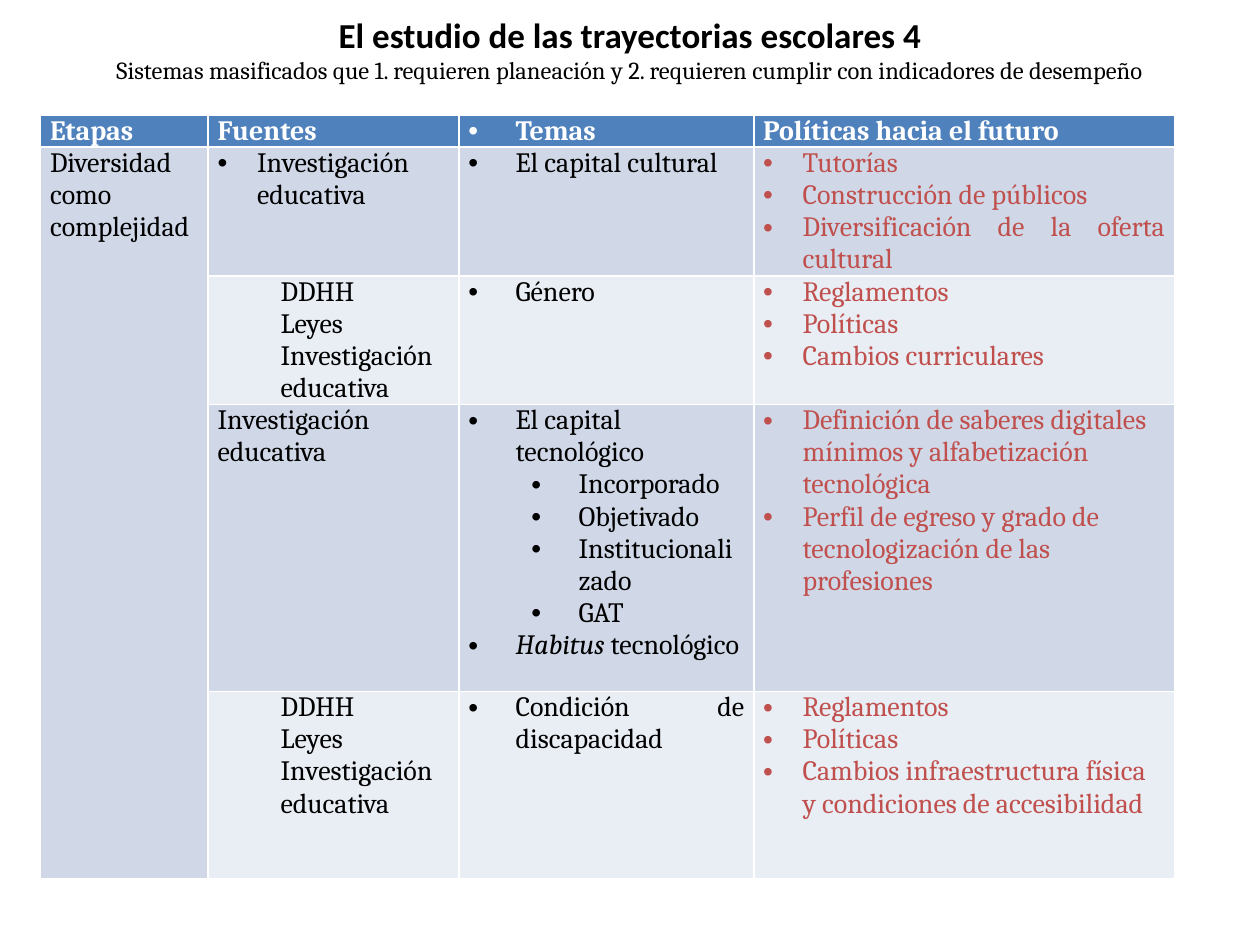
from pptx import Presentation
from pptx.dml.color import RGBColor as RGB
from pptx.enum.text import MSO_ANCHOR as Anchor, PP_ALIGN as Align
from pptx.util import Pt
from lxml.etree import SubElement as Sub
from pptx.oxml.ns import qn

BLACK = RGB(0, 0, 0)
WHITE = RGB(255, 255, 255)
RED = RGB(0xC0, 0x50, 0x4D)
BLUE = RGB(0x4F, 0x81, 0xBD)
BANDS = [RGB(0xD0, 0xD8, 0xE8), RGB(0xE9, 0xED, 0xF4)]

TITLE = [
    ("El estudio de las trayectorias escolares 4", 20, "Calibri", True),
    ("Sistemas masificados que 1. requieren planeación y "
     "2. requieren cumplir con indicadores de desempeño", 14, "Cambria", False),
]

# style: left margin, bullet hang, alignment
STYLES = {
    "plain": (0, 0, Align.LEFT),
    "wide": (0, 0, Align.JUSTIFY),
    "inset": (36, 0, Align.LEFT),
    "item": (22.5, 22.5, Align.LEFT),
    "item wide": (22.5, 22.5, Align.JUSTIFY),
    "theme": (27, 27, Align.LEFT),
    "theme wide": (27, 27, Align.JUSTIFY),
    "sub": (63, 27, Align.LEFT),
}

HEAD = [
    [("plain", "Etapas")],
    [("plain", "Fuentes")],
    [("theme", "Temas")],
    [("wide", "Políticas hacia el futuro")],
]
STAGE = [("plain", "Diversidad como complejidad")]
RIGHTS = [("inset", t) for t in ("DDHH", "Leyes", "Investigación educativa")]
ROWS = [
    [
        STAGE,
        [("item", "Investigación educativa")],
        [("theme", "El capital cultural")],
        [("item wide", "Tutorías"),
         ("item wide", "Construcción de públicos"),
         ("item wide", "Diversificación de la oferta cultural")],
    ],
    [
        [],
        RIGHTS,
        [("theme", "Género")],
        [("item wide", "Reglamentos"),
         ("item wide", "Políticas"),
         ("item wide", "Cambios curriculares")],
    ],
    [
        [],
        [("plain", "Investigación educativa")],
        [("theme", "El capital tecnológico"),
         ("sub", "Incorporado"),
         ("sub", "Objetivado"),
         ("sub", "Institucionalizado"),
         ("sub", "GAT"),
         ("theme", "*Habitus* tecnológico")],
        [("item", "Definición de saberes digitales mínimos y alfabetización tecnológica"),
         ("item", "Perfil de egreso y grado de tecnologización de las profesiones")],
    ],
    [
        [],
        RIGHTS,
        [("theme wide", "Condición de discapacidad")],
        [("item", "Reglamentos"),
         ("item", "Políticas"),
         ("item", "Cambios infraestructura física y condiciones de accesibilidad")],
    ],
]
WIDTHS = [95.8, 143.3, 168.5, 240.5]
HEIGHTS = [18, 73, 73, 164, 107.3]


def add_run(para, text, size, face, color, bold, slant=False):
    run = para.add_run()
    run.text = text
    font = run.font
    font.size, font.name = Pt(size), face
    font.bold, font.italic = bold, slant
    font.color.rgb = color


def add_para(para, style, text, color, bold):
    left, hang, para.alignment = STYLES[style]
    props = para._p.get_or_add_pPr()
    props.set("marL", str(Pt(left)))
    props.set("indent", str(-Pt(hang)))
    if style == "sub":
        para.level = 1
    if hang:
        Sub(props, qn("a:buFont")).set("typeface", "Arial")
        Sub(props, qn("a:buChar")).set("char", "•")
    for i, part in enumerate(text.split("*")):
        if part:
            add_run(para, part, 16, "Cambria", color, bold, i % 2 == 1)


def fill_cell(cell, paras, back, color, bold):
    cell.fill.solid()
    cell.fill.fore_color.rgb = back
    cell.margin_left = cell.margin_right = Pt(5.4)
    cell.margin_top = cell.margin_bottom = 0
    frame = cell.text_frame
    for i, (style, text) in enumerate(paras):
        para = frame.add_paragraph() if i else frame.paragraphs[0]
        add_para(para, style, text, color, bold)


deck = Presentation()
deck.slide_width, deck.slide_height = Pt(720), Pt(540)
slide = deck.slides.add_slide(deck.slide_layouts[5])

title = slide.shapes.title
title.left, title.top, title.width, title.height = Pt(36), Pt(10.8), Pt(648), Pt(34.5)
title.text_frame.vertical_anchor = Anchor.MIDDLE
para = title.text_frame.paragraphs[0]
para.alignment = Align.CENTER
for i, (text, size, face, bold) in enumerate(TITLE):
    if i:
        para.add_line_break()
    add_run(para, text, size, face, BLACK, bold)

table = slide.shapes.add_table(len(HEIGHTS), len(WIDTHS), Pt(23.2), Pt(65.7),
                               Pt(sum(WIDTHS)), Pt(sum(HEIGHTS))).table
for col, width in zip(table.columns, WIDTHS):
    col.width = Pt(width)
for row, height in zip(table.rows, HEIGHTS):
    row.height = Pt(height)
for c, paras in enumerate(HEAD):
    fill_cell(table.cell(0, c), paras, BLUE, WHITE, True)
for r, row in enumerate(ROWS):
    for c, paras in enumerate(row):
        color = RED if c == len(row) - 1 else BLACK
        back = BANDS[r % 2] if c else BANDS[0]
        fill_cell(table.cell(r + 1, c), paras, back, color, False)
table.cell(1, 0).merge(table.cell(len(ROWS), 0))

deck.save("out.pptx")
